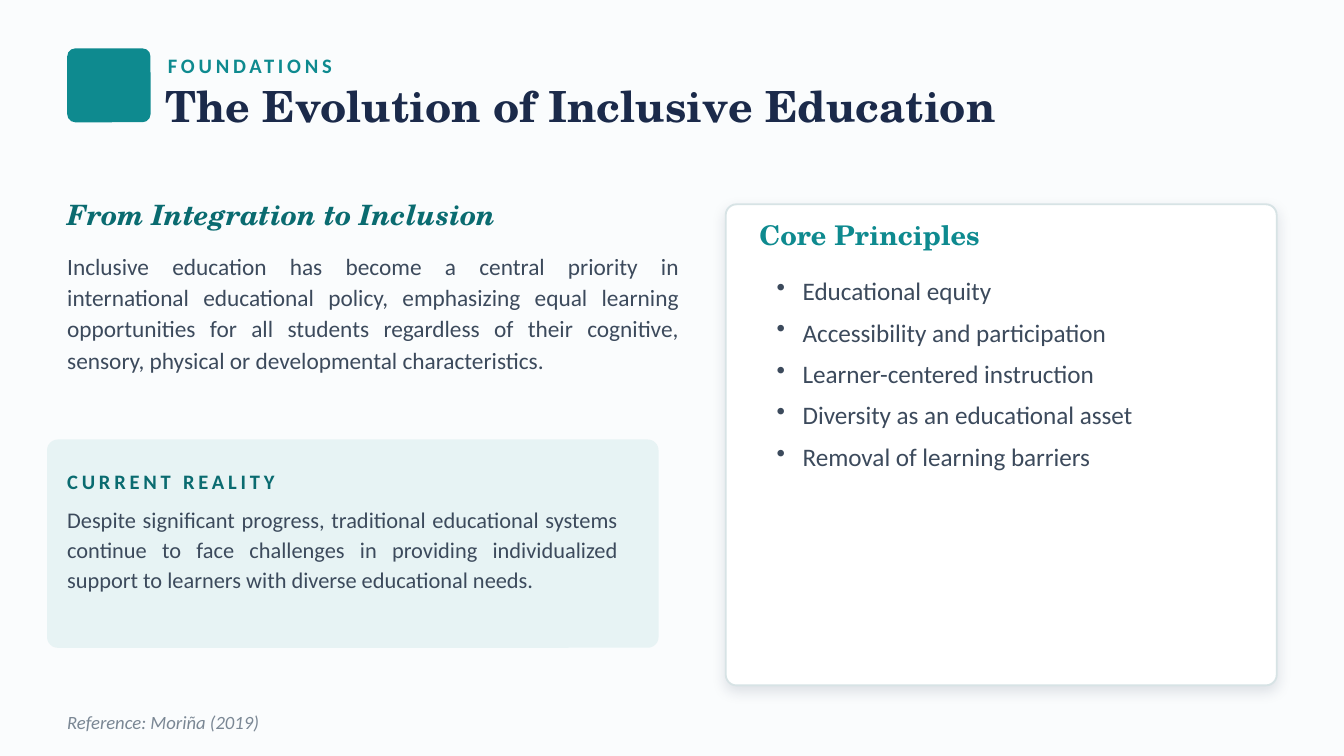
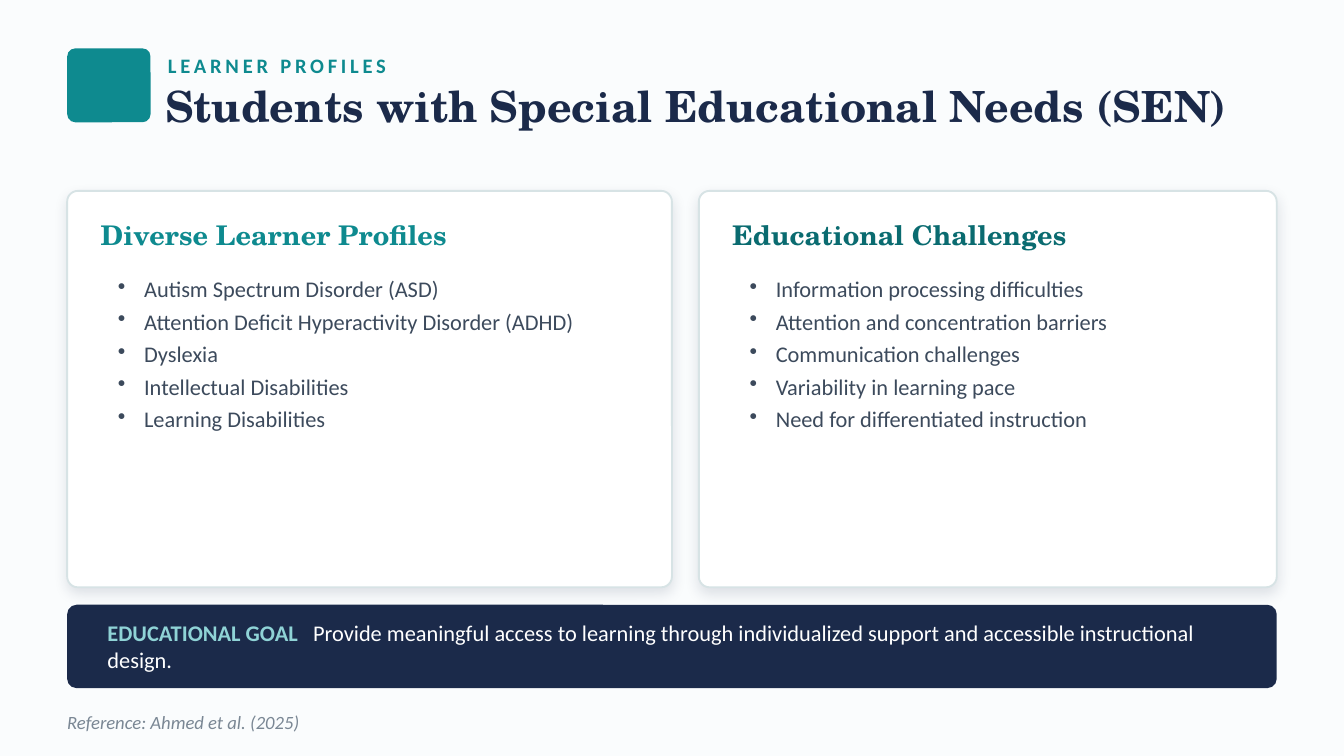
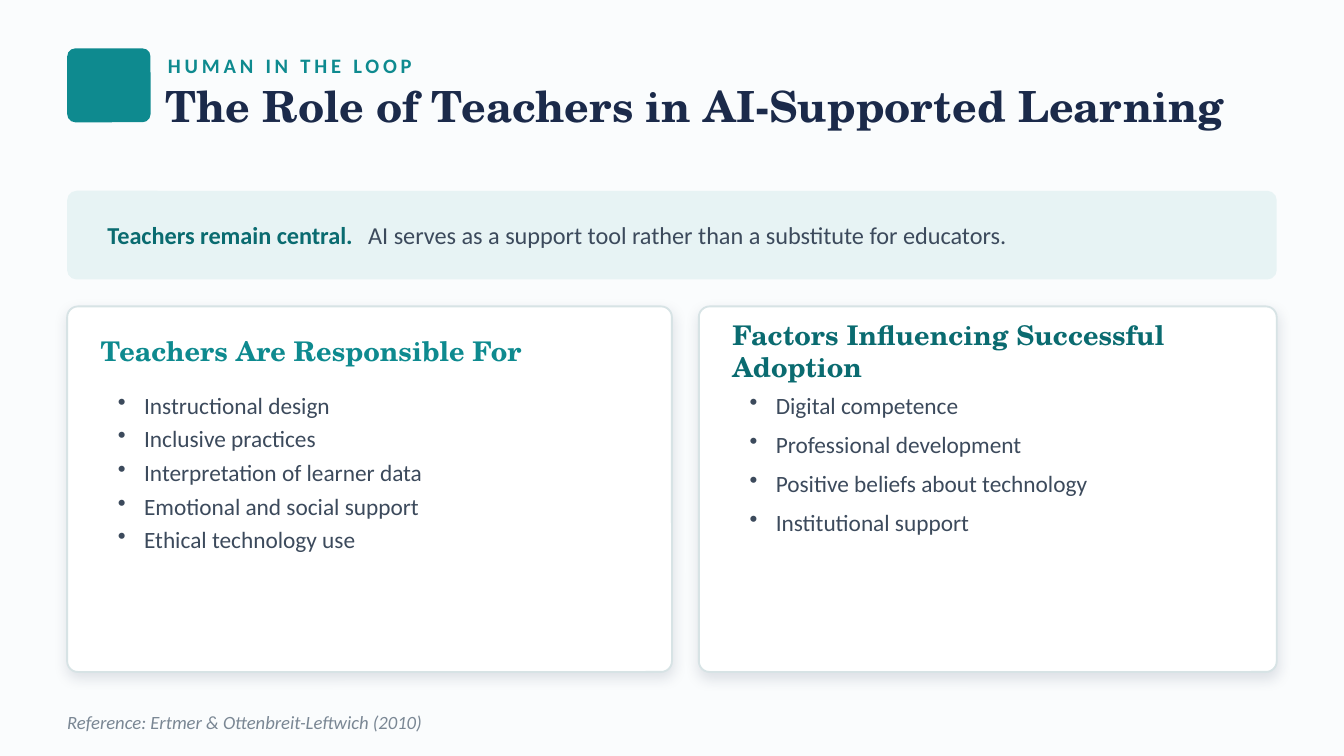
from dataclasses import dataclass
from typing import Any, NamedTuple

from lxml import etree
from pptx import Presentation
from pptx.dml.color import RGBColor
from pptx.enum.shapes import MSO_SHAPE
from pptx.enum.text import MSO_ANCHOR, PP_ALIGN
from pptx.oxml.ns import qn
from pptx.shapes.autoshape import Shape
from pptx.slide import Slide
from pptx.util import Inches, Pt

ROUNDED = MSO_SHAPE.ROUNDED_RECTANGLE
TOP, MIDDLE = MSO_ANCHOR.TOP, MSO_ANCHOR.MIDDLE
JUSTIFY = PP_ALIGN.JUSTIFY
BLANK_LAYOUT = 6


@dataclass(frozen=True)
class Theme:
    """Colours, fonts and type sizes of the deck."""

    paper: str = "FAFCFD"
    white: str = "FFFFFF"
    teal: str = "0E8A8F"
    deep_teal: str = "0A6B70"
    pale_teal: str = "E7F3F4"
    aqua: str = "8FD3D6"
    navy: str = "1B2A4A"
    slate: str = "3C4A5C"
    grey: str = "7A8794"
    border: str = "D7E3E5"
    serif: str = "TeX Gyre Schola"
    sans: str = "Calibri"
    title: float = 23
    subtitle: float = 15
    heading: float = 14.5
    large: float = 13.5
    lead: float = 13
    body: float = 12.5
    small: float = 12
    label: float = 11
    reference: float = 10


THEME = Theme()


class Area(NamedTuple):
    """Left, top, width and height in inches."""

    left: float
    top: float
    width: float
    height: float


@dataclass(frozen=True)
class Words:
    """A stretch of text in one style."""

    text: str
    size: float
    color: str
    font: str = THEME.sans
    bold: bool = False
    italic: bool = False
    tracking: float = 0


@dataclass(frozen=True)
class Card:
    """A white panel with a heading and a bullet list."""

    area: Area
    heading: str
    color: str
    items: tuple[str, ...]
    size: float
    gap: float = 3
    heading_drop: float = 0.16


@dataclass(frozen=True)
class Banner:
    """A full-width band with a bold label and a sentence."""

    area: Area
    fill: str
    label: Words
    sentence: Words
    tab: float


def left_card_area(top: float, height: float) -> Area:
    """Give the area of the left card."""
    return Area(0.5, top, 4.5, height)


def right_card_area(top: float, height: float) -> Area:
    """Give the area of the right card."""
    return Area(5.2, top, 4.3, height)


def set_attributes(target: Any, values: dict[str, Any]) -> None:
    """Set each named attribute on the target."""
    for name, value in values.items():
        setattr(target, name, value)


def add_child(parent: Any, tag: str, **attributes: str) -> Any:
    """Append an XML element with the given attributes."""
    return etree.SubElement(parent, qn(tag), attributes)


def add_panel(page: Slide, area: Area, fill: str, radius: float) -> Shape:
    """Draw a plain rounded rectangle with a corner radius in inches."""
    panel = page.shapes.add_shape(ROUNDED, *map(Inches, area))
    panel.adjustments[0] = radius / min(area.width, area.height)
    panel.shadow.inherit = False
    panel.fill.solid()
    panel.fill.fore_color.rgb = RGBColor.from_string(fill)
    panel.line.fill.background()
    return panel


def add_span(para: Any, words: Words) -> None:
    """Add one styled run to a paragraph."""
    span = para.add_run()
    span.text = words.text
    set_attributes(span.font, {
        "name": words.font,
        "size": Pt(words.size),
        "bold": words.bold,
        "italic": words.italic,
    })
    span.font.color.rgb = RGBColor.from_string(words.color)
    if words.tracking:
        span._r.get_or_add_rPr().set("spc", str(int(words.tracking * 100)))


def add_box(page: Slide, area: Area, anchor: Any, inset: bool = False) -> Any:
    """Add a wrapping text box and return its text frame."""
    frame = page.shapes.add_textbox(*map(Inches, area)).text_frame
    set_attributes(frame, {"word_wrap": True, "vertical_anchor": anchor})
    if not inset:
        sides = ("left", "top", "right", "bottom")
        set_attributes(frame, {f"margin_{side}": 0 for side in sides})
    return frame


def add_text(page: Slide, area: Area, words: Words, anchor: Any = MIDDLE, **format_values: Any) -> None:
    """Add a box holding one paragraph in one style."""
    para = add_box(page, area, anchor).paragraphs[0]
    set_attributes(para, format_values)
    add_span(para, words)


def add_label(page: Slide, area: Area, text: str, color: str) -> None:
    """Add a small tracked label."""
    add_text(page, area, Words(text, THEME.label, color, bold=True, tracking=2))


def add_bullets(page: Slide, area: Area, card: Card) -> None:
    """Add the bullet list of a card."""
    frame = add_box(page, area, TOP, inset=True)
    for index, item in enumerate(card.items):
        para = frame.add_paragraph() if index else frame.paragraphs[0]
        properties = para._p.get_or_add_pPr()
        indent = Pt(14)
        properties.set("marL", str(indent))
        properties.set("indent", str(-indent))
        add_child(properties, "a:buSzPct", val="100000")
        add_child(properties, "a:buChar", char="•")
        para.space_after = Pt(card.gap)
        add_span(para, Words(item, card.size, THEME.slate))


def add_card(page: Slide, card: Card) -> None:
    """Draw a bordered card with a soft shadow, its heading and its list."""
    left, top, width, height = card.area
    panel = add_panel(page, card.area, THEME.white, 0.08)
    panel.line.color.rgb = RGBColor.from_string(THEME.border)
    panel.line.width = Pt(1)
    effects = panel.element.spPr.find(qn("a:effectLst"))
    shadow = add_child(effects, "a:outerShdw", blurRad=str(Pt(7)), dist=str(Pt(3)),
                       dir="5400000", algn="bl", rotWithShape="0")
    tint = add_child(shadow, "a:srgbClr", val=THEME.navy)
    add_child(tint, "a:alpha", val="12000")

    heading_top = top + card.heading_drop
    text_width = width - 0.5
    add_text(page, Area(left + 0.25, heading_top, text_width, 0.34),
             Words(card.heading, THEME.heading, card.color, THEME.serif, bold=True))
    add_bullets(page, Area(left + 0.28, heading_top + 0.42, text_width, height - 0.76), card)


def add_banner(page: Slide, banner: Banner) -> None:
    """Draw a band with its label and sentence parted by a tab."""
    area = banner.area
    add_panel(page, area, banner.fill, 0.07)
    text_area = area._replace(left=area.left + 0.3, width=area.width - 0.5)
    para = add_box(page, text_area, MIDDLE).paragraphs[0]
    tabs = add_child(para._p.get_or_add_pPr(), "a:tabLst")
    add_child(tabs, "a:tab", pos=str(Inches(banner.tab)), algn="l")
    add_span(para, banner.label)
    add_span(para, banner.sentence)


def add_page(deck: Any, topic: str, title: str, reference: str) -> Slide:
    """Add a slide with the shared header and reference line."""
    page = deck.slides.add_slide(deck.slide_layouts[BLANK_LAYOUT])
    add_panel(page, Area(0.5, 0.36, 0.62, 0.55), THEME.teal, 0.06)
    add_label(page, Area(1.25, 0.36, 7.8, 0.26), topic, THEME.teal)
    add_text(page, Area(1.23, 0.62, 8.5, 0.78),
             Words(title, THEME.title, THEME.navy, THEME.serif, bold=True),
             TOP, line_spacing=0.95)
    add_text(page, Area(0.5, 5.22, 7.3, 0.3),
             Words(f"Reference: {reference}", THEME.reference, THEME.grey, italic=True))
    return page


def build_evolution(deck: Any) -> None:
    """Build the slide on the evolution of inclusive education."""
    page = add_page(deck, "FOUNDATIONS", "The Evolution of Inclusive Education", "Moriña (2019)")
    add_text(page, Area(0.5, 1.42, 4.4, 0.35),
             Words("From Integration to Inclusion", THEME.subtitle, THEME.deep_teal,
                   THEME.serif, bold=True, italic=True))
    add_text(page, Area(0.5, 1.85, 4.55, 1.5),
             Words("Inclusive education has become a central priority in international "
                   "educational policy, emphasizing equal learning opportunities for all "
                   "students regardless of their cognitive, sensory, physical or "
                   "developmental characteristics.", THEME.body, THEME.slate),
             TOP, alignment=JUSTIFY, line_spacing=1.12)
    add_panel(page, Area(0.35, 3.27, 4.55, 1.55), THEME.pale_teal, 0.08)
    add_label(page, Area(0.5, 3.44, 4, 0.28), "CURRENT REALITY", THEME.deep_teal)
    add_text(page, Area(0.5, 3.75, 4.1, 1),
             Words("Despite significant progress, traditional educational systems continue "
                   "to face challenges in providing individualized support to learners with "
                   "diverse educational needs.", THEME.small, THEME.slate),
             TOP, alignment=JUSTIFY, line_spacing=1.1)
    add_card(page, Card(
        Area(5.4, 1.52, 4.1, 3.58), "Core Principles", THEME.teal,
        ("Educational equity", "Accessibility and participation",
         "Learner-centered instruction", "Diversity as an educational asset",
         "Removal of learning barriers"),
        THEME.large, gap=6, heading_drop=0.06))


def build_learners(deck: Any) -> None:
    """Build the slide on students with special educational needs."""
    page = add_page(deck, "LEARNER PROFILES", "Students with Special Educational Needs (SEN)",
                    "Ahmed et al. (2025)")
    add_card(page, Card(
        left_card_area(1.42, 2.95), "Diverse Learner Profiles", THEME.teal,
        ("Autism Spectrum Disorder (ASD)", "Attention Deficit Hyperactivity Disorder (ADHD)",
         "Dyslexia", "Intellectual Disabilities", "Learning Disabilities"),
        THEME.small))
    add_card(page, Card(
        right_card_area(1.42, 2.95), "Educational Challenges", THEME.deep_teal,
        ("Information processing difficulties", "Attention and concentration barriers",
         "Communication challenges", "Variability in learning pace",
         "Need for differentiated instruction"),
        THEME.small))
    add_banner(page, Banner(
        Area(0.5, 4.5, 9, 0.62), THEME.navy,
        Words("EDUCATIONAL GOAL\t", THEME.small, THEME.aqua, bold=True),
        Words("Provide meaningful access to learning through individualized support and "
              "accessible instructional design.", THEME.small, THEME.white),
        tab=1.53))


def build_teachers(deck: Any) -> None:
    """Build the slide on the role of teachers."""
    page = add_page(deck, "HUMAN IN THE LOOP", "The Role of Teachers in AI-Supported Learning",
                    "Ertmer & Ottenbreit-Leftwich (2010)")
    add_banner(page, Banner(
        Area(0.5, 1.42, 9, 0.66), THEME.pale_teal,
        Words("Teachers remain central.\t", THEME.lead, THEME.deep_teal, bold=True),
        Words("AI serves as a support tool rather than a substitute for educators.",
              THEME.lead, THEME.slate),
        tab=1.94))
    add_card(page, Card(
        left_card_area(2.28, 2.72), "Teachers Are Responsible For", THEME.teal,
        ("Instructional design", "Inclusive practices", "Interpretation of learner data",
         "Emotional and social support", "Ethical technology use"),
        THEME.body))
    add_card(page, Card(
        right_card_area(2.28, 2.72), "Factors Influencing Successful Adoption",
        THEME.deep_teal,
        ("Digital competence", "Professional development",
         "Positive beliefs about technology", "Institutional support"),
        THEME.body, gap=6))


def main() -> None:
    """Build and save the deck."""
    deck = Presentation()
    width = Inches(10)
    set_attributes(deck, {"slide_width": width, "slide_height": width * 9 // 16})
    backdrop = deck.slide_master.background.fill
    backdrop.solid()
    backdrop.fore_color.rgb = RGBColor.from_string(THEME.paper)
    for build in (build_evolution, build_learners, build_teachers):
        build(deck)
    deck.save("out.pptx")


if __name__ == "__main__":
    main()
